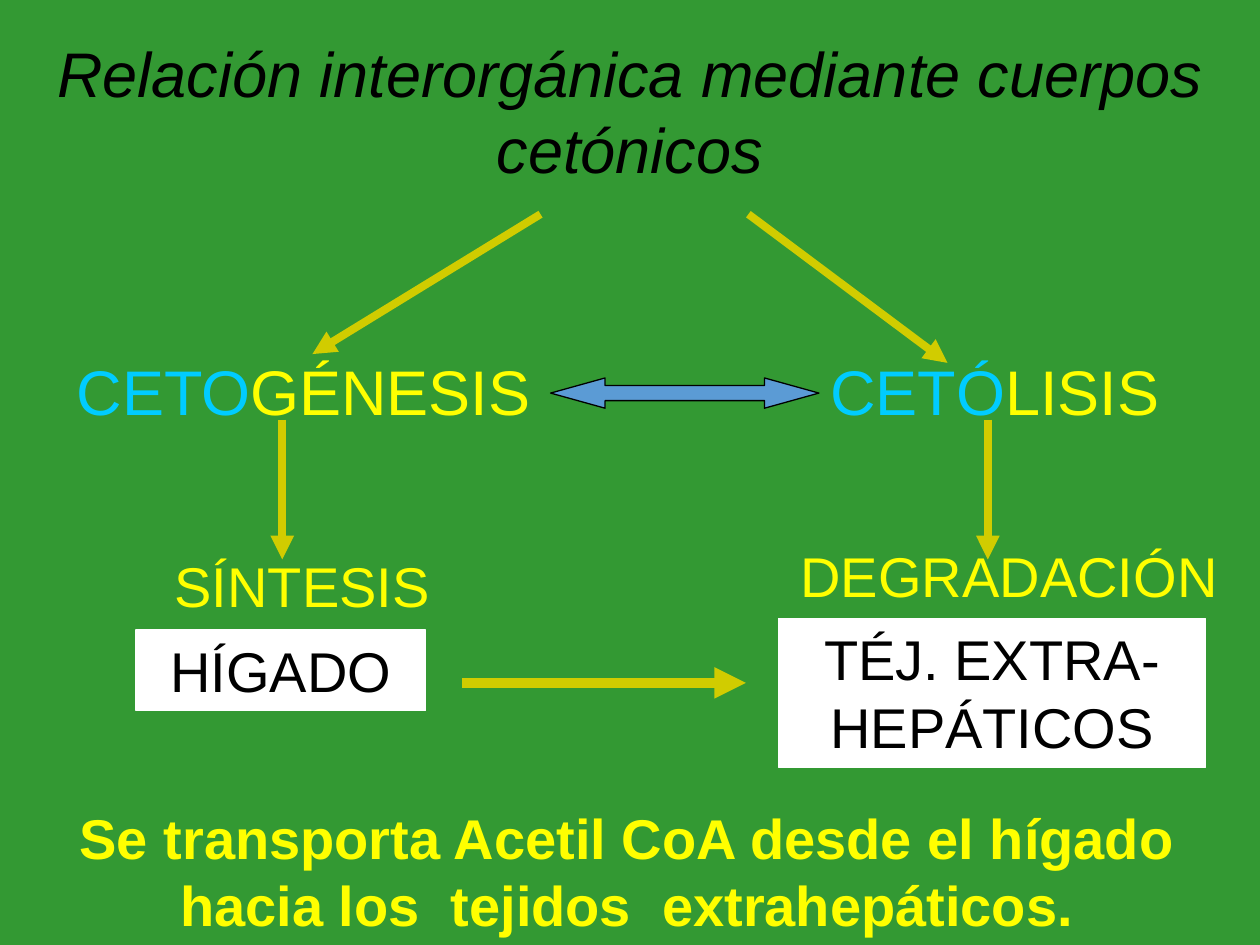
from lxml import etree
from pptx import Presentation
from pptx.dml.color import RGBColor
from pptx.enum.shapes import MSO_CONNECTOR, MSO_SHAPE
from pptx.enum.text import MSO_ANCHOR, MSO_AUTO_SIZE, PP_ALIGN
from pptx.oxml.ns import qn
from pptx.util import Inches, Pt

GREEN = RGBColor(0x33, 0x99, 0x33)
YELLOW = RGBColor(0xFF, 0xFF, 0x00)
CYAN = RGBColor(0x00, 0xCC, 0xFF)
GOLD = RGBColor(0xD1, 0xCC, 0x00)
BLUE = RGBColor(0x5B, 0x9B, 0xD5)
BLACK = RGBColor(0x00, 0x00, 0x00)
WHITE = RGBColor(0xFF, 0xFF, 0xFF)
CENTER, LEFT = PP_ALIGN.CENTER, PP_ALIGN.LEFT
MIDDLE, TOP = MSO_ANCHOR.MIDDLE, MSO_ANCHOR.TOP
NO_AUTOFIT = MSO_AUTO_SIZE.NONE
STRAIGHT = MSO_CONNECTOR.STRAIGHT
RECTANGLE, DOUBLE_ARROW = MSO_SHAPE.RECTANGLE, MSO_SHAPE.LEFT_RIGHT_ARROW


def write(frame, lines, size, color, align=CENTER, anchor=TOP, bold=False, italic=False):
    frame.word_wrap = True
    frame.auto_size = NO_AUTOFIT
    frame.vertical_anchor = anchor
    frame.text = "\n".join(lines)
    for paragraph in frame.paragraphs:
        paragraph.alignment = align
        font = paragraph.font
        font.name, font.size = "Arial", Pt(size)
        font.bold, font.italic = bold, italic
        font.color.rgb = color


def style(shape, fill, line):
    shape.shadow.inherit = False
    shape.fill.solid()
    shape.fill.fore_color.rgb = fill
    shape.line.color.rgb = line
    shape.line.width = Pt(0.75)


prs = Presentation()
prs.slide_width, prs.slide_height = Inches(10), Inches(7.5)
slide = prs.slides.add_slide(prs.slide_layouts[5])
slide.background.fill.solid()
slide.background.fill.fore_color.rgb = GREEN
shapes = slide.shapes

title = shapes.title
title.left, title.top = Inches(0.25), Inches(0.25)
title.width, title.height = Inches(9.5), Inches(1.25)
write(title.text_frame, ["Relación interorgánica mediante cuerpos cetónicos"],
      36, BLACK, anchor=MIDDLE, italic=True)

for left, width, prefix, ending in [(0.51, 4.02, "CETO", "GÉNESIS"),
                                    (6.49, 2.99, "CETÓ", "LISIS")]:
    process = shapes.add_textbox(Inches(left), Inches(2.75), Inches(width), Inches(0.7))
    write(process.text_frame, [prefix], 36, YELLOW, align=LEFT)
    term = process.text_frame.paragraphs[0]
    term.runs[0].font.color.rgb = CYAN
    term.add_run().text = ending

for left, top, width, meaning in [(6.02, 4.25, 3.98, "DEGRADACIÓN"),
                                  (1.22, 4.33, 2.36, "SÍNTESIS")]:
    label = shapes.add_textbox(Inches(left), Inches(top), Inches(width), Inches(0.63))
    write(label.text_frame, [meaning], 32, YELLOW)

for left, top, width, height, tissue in [(1.08, 5, 2.3, 0.64, "HÍGADO"),
                                         (6.18, 4.91, 3.39, 1.18, "TÉJ. EXTRA-HEPÁTICOS")]:
    organ = shapes.add_shape(RECTANGLE, Inches(left), Inches(top), Inches(width), Inches(height))
    style(organ, WHITE, WHITE)
    write(organ.text_frame, [tissue], 32, BLACK)

exchange = shapes.add_shape(DOUBLE_ARROW, Inches(4.37), Inches(3), Inches(2.13), Inches(0.24))
exchange.adjustments[0], exchange.adjustments[1] = 0.5, 1.8
style(exchange, BLUE, BLACK)

for x1, y1, x2, y2, weight in [(4.29, 1.7, 2.48, 2.81, 4.5),
                               (5.94, 1.7, 7.52, 2.88, 4.5),
                               (2.24, 3.33, 2.24, 4.44, 4.5),
                               (7.84, 3.33, 7.84, 4.44, 4.5),
                               (3.67, 5.42, 5.92, 5.42, 6)]:
    arrow = shapes.add_connector(STRAIGHT, Inches(x1), Inches(y1), Inches(x2), Inches(y2))
    arrow.line.color.rgb = GOLD
    arrow.line.width = Pt(weight)
    properties = arrow.line._get_or_add_ln()
    etree.SubElement(properties, qn("a:tailEnd"), type="triangle")
    etree.SubElement(properties.getparent(), qn("a:effectLst"))

conclusion = shapes.add_textbox(Inches(0.5), Inches(6.33), Inches(8.96), Inches(1.18))
write(conclusion.text_frame, ["Se transporta Acetil CoA desde el hígado",
                              "hacia los  tejidos  extrahepáticos."], 32, YELLOW, bold=True)
conclusion.text_frame.word_wrap = False

prs.save("out.pptx")
